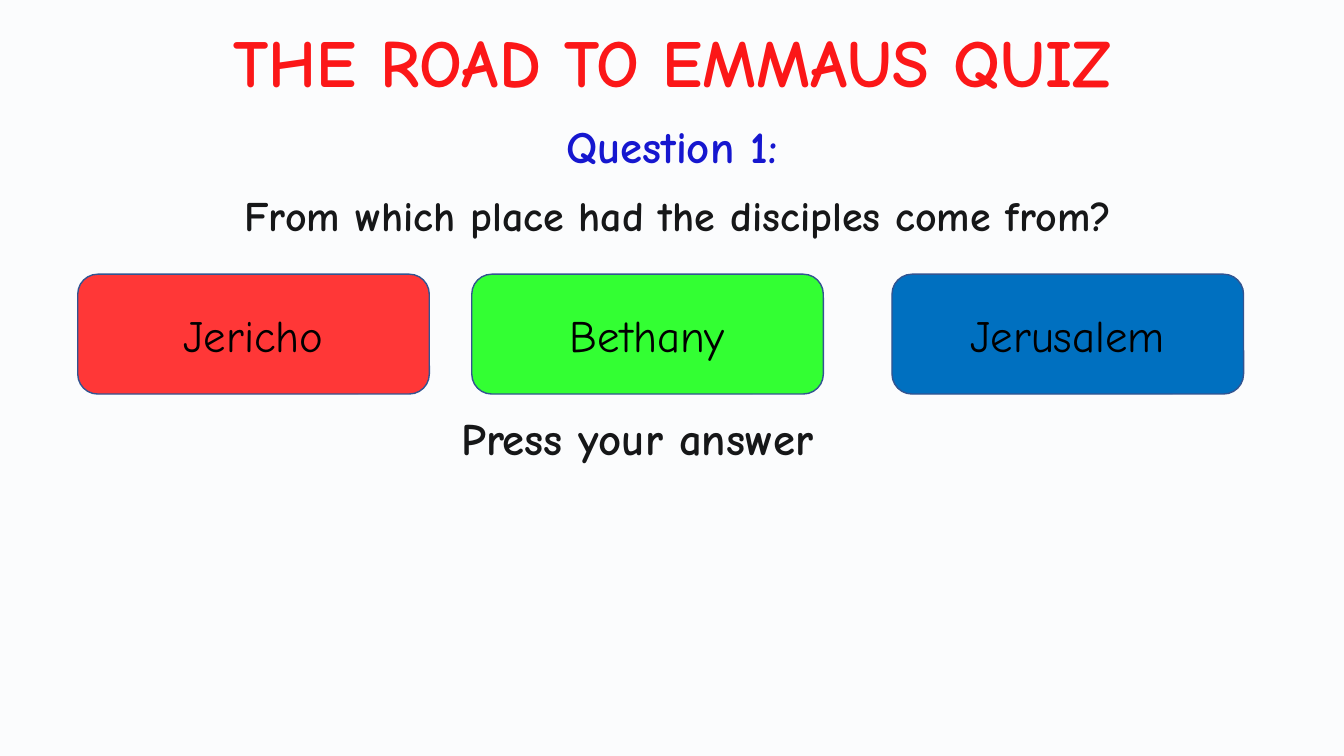
import pptx
import pptx.dml.color
import pptx.enum.shapes
import pptx.enum.text
import pptx.oxml
import pptx.oxml.ns
import pptx.util
from dataclasses import dataclass

Cm = pptx.util.Cm
Pt = pptx.util.Pt
Align = pptx.enum.text.PP_ALIGN
Anchor = pptx.enum.text.MSO_ANCHOR
Shape = pptx.enum.shapes.MSO_SHAPE


@dataclass(frozen=True)
class Theme:
    font: str = "Comic Neue"
    heading: str = "FF0000"
    label: str = "0000CC"
    ink: str = "000000"
    border: str = "325491"
    veil: str = "DAE3F3"
    red: str = "FF3737"
    green: str = "33FF33"
    blue: str = "0070C0"
    title_size: int = 48
    body_size: int = 32
    question_size: int = 30


def rgb(value):
    return pptx.dml.color.RGBColor.from_string(value)


class QuizSlide:
    def __init__(self, deck, theme):
        self.theme = theme
        self.width, self.height = deck.slide_width, deck.slide_height
        self.slide = deck.slides.add_slide(deck.slide_layouts[5])

    def set_wording(self, frame, wording, size, color, bold=True, align=Align.CENTER,
                    anchor=Anchor.TOP, wrap=True):
        frame.text = wording
        frame.word_wrap = wrap
        frame.auto_size = pptx.enum.text.MSO_AUTO_SIZE.NONE
        frame.vertical_anchor = anchor
        paragraph = frame.paragraphs[0]
        paragraph.alignment = align
        font = paragraph.runs[0].font
        font.name, font.size, font.bold = self.theme.font, Pt(size), bold
        font.color.rgb = rgb(color)
        return paragraph

    def title(self, wording, left, top, width, height):
        heading = self.slide.shapes.title
        heading.left, heading.top = Cm(left), Cm(top)
        heading.width, heading.height = Cm(width), Cm(height)
        self.set_wording(heading.text_frame, wording, self.theme.title_size,
                         self.theme.heading, wrap=False)

    def text(self, wording, left, top, width, height, size, color,
             align=Align.CENTER, line_spacing=None, space_before=None):
        box = self.slide.shapes.add_textbox(Cm(left), Cm(top), Cm(width), Cm(height))
        paragraph = self.set_wording(box.text_frame, wording, size, color, align=align)
        paragraph.line_spacing = line_spacing
        paragraph.space_before = space_before

    def veil(self, opacity):
        cover = self.slide.shapes.add_shape(Shape.RECTANGLE, 0, 0, self.width, self.height)
        cover.shadow.inherit = False
        cover.line.fill.background()
        cover.fill.solid()
        cover.fill.fore_color.rgb = rgb(self.theme.veil)
        color = cover._element.spPr.find(".//" + pptx.oxml.ns.qn("a:srgbClr"))
        alpha = pptx.oxml.parse_xml(
            f'<a:alpha {pptx.oxml.ns.nsdecls("a")} val="{opacity * 1000}"/>')
        color.append(alpha)

    def answer(self, wording, left, top, width, height, color):
        button = self.slide.shapes.add_shape(
            Shape.ROUNDED_RECTANGLE, Cm(left), Cm(top), Cm(width), Cm(height))
        button.shadow.inherit = False
        button.fill.solid()
        button.fill.fore_color.rgb = rgb(color)
        button.line.color.rgb = rgb(self.theme.border)
        button.line.width = Pt(1)
        self.set_wording(button.text_frame, wording, self.theme.body_size,
                         self.theme.ink, bold=False, anchor=Anchor.MIDDLE)


def main():
    deck = pptx.Presentation()
    deck.slide_width, deck.slide_height = Cm(33.87), Cm(19.05)
    theme = Theme()
    quiz = QuizSlide(deck, theme)

    quiz.title("THE ROAD TO EMMAUS QUIZ", 3.33, 0.38, 27.23, 2.31)
    quiz.text("Press your answer", 11.38, 10.39, 17.09, 1.83, theme.body_size,
              theme.ink, Align.LEFT, line_spacing=0.9, space_before=Pt(7.5))
    quiz.text("Question 1:", 11.33, 2.87, 11.2, 1.63, theme.body_size, theme.label)
    quiz.text("From which place had the disciples come from?", 0.71, 4.5, 32.77, 3.02,
              theme.question_size, theme.ink, line_spacing=Pt(40), space_before=Pt(10))
    quiz.veil(10)

    answers = [("Jericho", 1.96, theme.red),
               ("Bethany", 11.89, theme.green),
               ("Jerusalem", 22.48, theme.blue)]
    for place, left, color in answers:
        quiz.answer(place, left, 6.91, 8.86, 3.02, color)

    deck.save("out.pptx")


if __name__ == "__main__":
    main()
